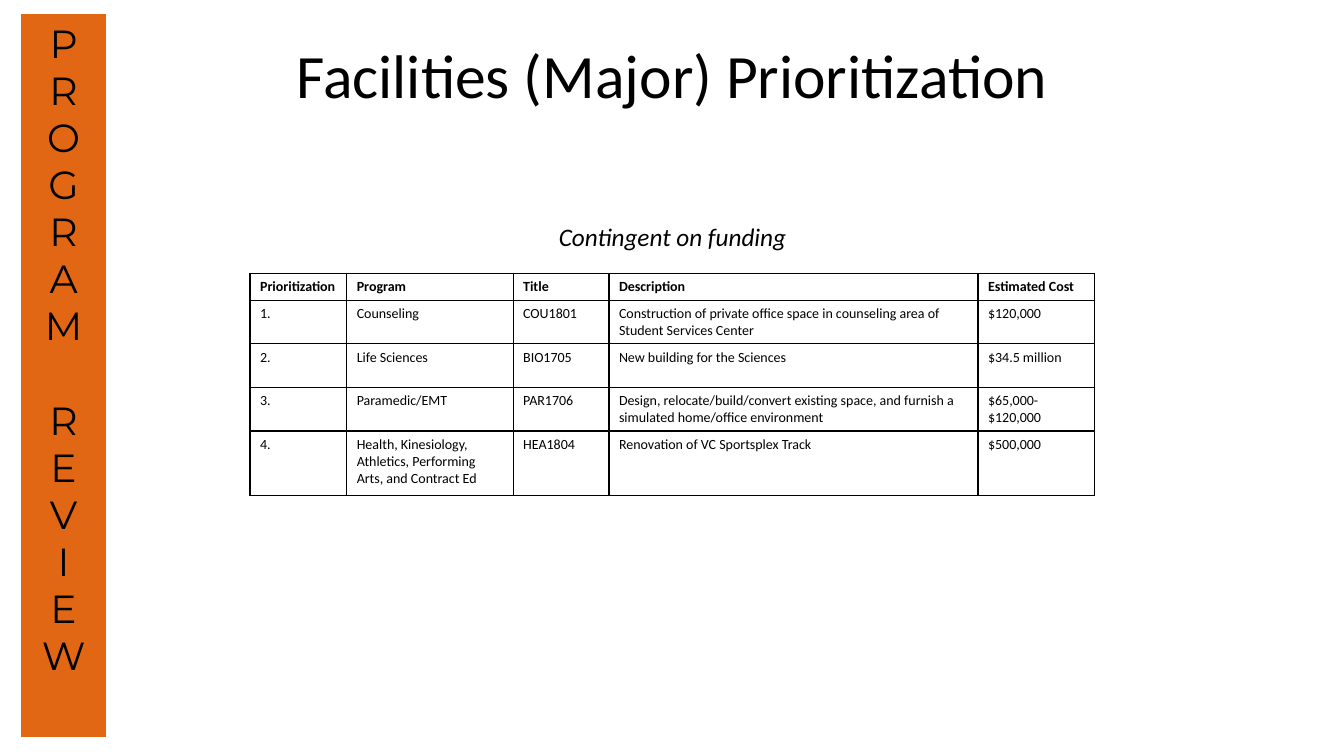
from lxml.etree import SubElement
from pptx import Presentation
from pptx.dml.color import RGBColor
from pptx.enum.shapes import MSO_SHAPE as Preset
from pptx.enum.text import MSO_ANCHOR as Anchor, PP_ALIGN as Align
from pptx.oxml.ns import qn
from pptx.util import Inches, Pt

BLACK = RGBColor(0x00, 0x00, 0x00)
ORANGE = RGBColor(0xE2, 0x67, 0x14)
BODY_FONT = "Calibri"
SIDEBAR_FONT = "Montserrat"

COLUMN_WIDTHS = [7.2, 12.38, 7.13, 27.46, 8.7]
ROW_HEIGHTS = [3.47, 5.73, 5.73, 5.73, 8.53]
REQUESTS = [
    ["Prioritization", "Program", "Title", "Description", "Estimated Cost"],
    ["1.", "Counseling", "COU1801",
     "Construction of private office space in counseling area of Student Services Center",
     "$120,000"],
    ["2.", "Life Sciences", "BIO1705", "New building for the Sciences", "$34.5 million"],
    ["3.", "Paramedic/EMT", "PAR1706",
     "Design, relocate/build/convert existing space, and furnish a simulated "
     "home/office environment", "$65,000-$120,000"],
    ["4.", "Health, Kinesiology, Athletics, Performing Arts, and Contract Ed", "HEA1804",
     "Renovation of VC Sportsplex Track", "$500,000"],
]


def write(paragraph, text, size=10, font=BODY_FONT, color=BLACK, bold=False,
          italic=False, align=Align.LEFT, line_spacing=1.0, space_before=0):
    paragraph.alignment = align
    paragraph.line_spacing = line_spacing
    paragraph.space_before = Pt(space_before)
    run = paragraph.add_run()
    run.text = text
    run.font.size = Pt(size)
    run.font.name = font
    run.font.color.rgb = color
    run.font.bold = bold
    run.font.italic = italic


class GridSlide:
    """A slide measured on a grid of 100 columns and 100 rows."""

    def __init__(self, presentation):
        self.column = presentation.slide_width / 100
        self.row = presentation.slide_height / 100
        self.slide = presentation.slides.add_slide(presentation.slide_layouts[6])

    def box(self, left, top, width, height):
        return (round(left * self.column), round(top * self.row),
                round(width * self.column), round(height * self.row))

    def text(self, area, text, **text_format):
        frame = self.slide.shapes.add_textbox(*self.box(*area)).text_frame
        frame.word_wrap = True
        write(frame.paragraphs[0], text, align=Align.CENTER, **text_format)

    def sidebar(self, area, words, size, word_gap):
        shape = self.slide.shapes.add_shape(Preset.RECTANGLE, *self.box(*area))
        shape.shadow.inherit = False
        shape.fill.solid()
        shape.fill.fore_color.rgb = ORANGE
        shape.line.fill.background()
        frame = shape.text_frame
        frame.word_wrap = True
        frame.vertical_anchor = Anchor.TOP
        paragraph = frame.paragraphs[0]
        for word_index, word in enumerate(words):
            for letter_index, letter in enumerate(word):
                starts_next_word = word_index > 0 and letter_index == 0
                if word_index or letter_index:
                    paragraph = frame.add_paragraph()
                write(paragraph, letter, size=size, font=SIDEBAR_FONT, align=Align.CENTER,
                      space_before=word_gap if starts_next_word else 0)

    def table(self, left, top, widths, heights, rows):
        area = self.box(left, top, sum(widths), sum(heights))
        table = self.slide.shapes.add_table(len(rows), len(widths), *area).table
        table.first_row = table.horz_banding = False
        for column, width in zip(table.columns, widths):
            column.width = round(width * self.column)
        for row, height, texts in zip(table.rows, heights, rows):
            row.height = round(height * self.row)
            for cell, text in zip(row.cells, texts):
                self.border(cell)
                cell.fill.background()
                write(cell.text_frame.paragraphs[0], text, bold=texts is rows[0])

    def border(self, cell):
        properties = cell._tc.get_or_add_tcPr()
        for side in ("a:lnL", "a:lnR", "a:lnT", "a:lnB"):
            line = SubElement(properties, qn(side), w=str(Pt(1)))
            fill = SubElement(line, qn("a:solidFill"))
            SubElement(fill, qn("a:srgbClr"), val=str(BLACK))


def main():
    presentation = Presentation()
    presentation.slide_width = Inches(13.33)
    presentation.slide_height = Inches(7.5)
    page = GridSlide(presentation)

    # Title and subtitle
    page.text((6.9, 5.33, 86.27, 16.13), "Facilities (Major) Prioritization",
              size=44, line_spacing=0.9)
    page.text((9.38, 28.67, 81.32, 5.33), "Contingent on funding", size=18, italic=True)

    # Ranked requests
    page.table(18.6, 36.13, COLUMN_WIDTHS, ROW_HEIGHTS, REQUESTS)

    # Vertical banner, one letter a line
    page.sidebar((1.58, 1.87, 6.3, 95.6), ["PROGRAM", "REVIEW"], size=28, word_gap=34)

    presentation.save("out.pptx")


if __name__ == "__main__":
    main()
